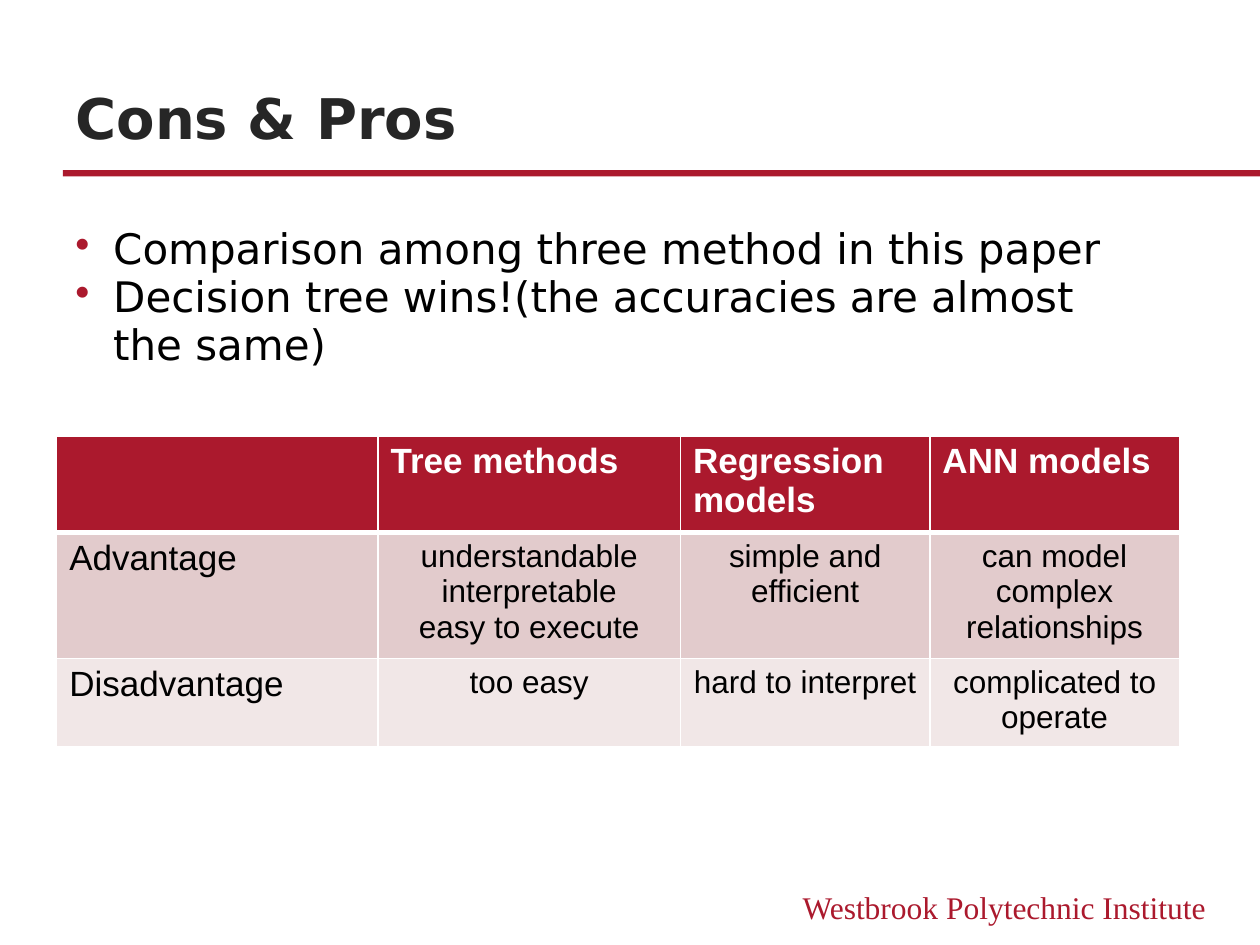
from lxml.etree import SubElement
from pptx import Presentation
from pptx.dml.color import RGBColor
from pptx.enum.shapes import MSO_SHAPE
from pptx.enum.text import MSO_ANCHOR, PP_ALIGN
from pptx.oxml.ns import qn
from pptx.util import Inches, Pt

HUES = {"red": "AB192D", "dark": "262626", "black": "000000",
        "white": "FFFFFF", "rose": "E2CBCC", "pale": "F1E7E7"}


def write(frame, text, size, font="Arial", hue="black", bold=False,
          align=PP_ALIGN.LEFT, space=None, bullet=False):
    """Fill a text frame, one paragraph per line of text."""
    frame.word_wrap = True
    frame.text = text
    for para in frame.paragraphs:
        para.alignment = align
        para.line_spacing = space
        para.font.size = Pt(size)
        for run in para.runs:
            run.font.name = font
            run.font.size = Pt(size)
            run.font.bold = bold
            run.font.color.rgb = RGBColor.from_string(HUES[hue])
        if bullet:
            props = para._p.get_or_add_pPr()
            props.set("marL", str(Inches(0.3)))
            props.set("indent", str(Inches(-0.3)))
            tint = SubElement(props, qn("a:buClr"))
            SubElement(tint, qn("a:srgbClr"), val=HUES["red"])
            SubElement(props, qn("a:buChar"), char="•")


def edge(cell, side, width):
    """Draw one white border of a table cell."""
    line = SubElement(cell._tc.get_or_add_tcPr(), qn("a:ln" + side), w=str(Pt(width)))
    fill = SubElement(line, qn("a:solidFill"))
    SubElement(fill, qn("a:srgbClr"), val=HUES["white"])


deck = Presentation()
deck.slide_width, deck.slide_height = Inches(10), Inches(7.5)
slide = deck.slides.add_slide(deck.slide_layouts[5])
shapes = slide.shapes

# Title and the rule below it
title = shapes.title
title.left, title.top = Inches(0.5), Inches(0.38)
title.width, title.height = Inches(9), Inches(0.87)
title.text_frame.vertical_anchor = MSO_ANCHOR.BOTTOM
write(title.text_frame, "Cons & Pros", 32, font="DejaVu Sans", hue="dark", bold=True)

rule = shapes.add_shape(MSO_SHAPE.RECTANGLE, Inches(0.5), Inches(1.35),
                        Inches(9.5), Inches(0.05))
rule.shadow.inherit = False
rule.fill.solid()
rule.fill.fore_color.rgb = RGBColor.from_string(HUES["red"])
rule.line.fill.background()

# Bullets
body = shapes.add_textbox(Inches(0.5), Inches(1.75), Inches(8.75), Inches(1.33))
write(body.text_frame,
      "Comparison among three method in this paper\n"
      "Decision tree wins!(the accuracies are almost the same)",
      24, font="DejaVu Sans", space=0.95, bullet=True)

# Table of methods
rows = [
    ["", "Tree methods", "Regression models", "ANN models"],
    ["Advantage", "understandable\ninterpretable\neasy to execute",
     "simple and efficient", "can model complex relationships"],
    ["Disadvantage", "too easy", "hard to interpret", "complicated to operate"],
]
wide = [2.55, 2.4, 1.98, 1.98]
table = shapes.add_table(len(rows), len(wide), Inches(0.45), Inches(3.46),
                         Inches(sum(wide)), Inches(0.62 * len(rows))).table
for col, width in zip(table.columns, wide):
    col.width = Inches(width)

for r, (row, hue) in enumerate(zip(rows, ["red", "rose", "pale"])):
    for c, text in enumerate(row):
        cell = table.cell(r, c)
        head = r == 0
        for side in "LRTB":
            thick = (head and side == "B") or (r == 1 and side == "T")
            edge(cell, side, 3 if thick else 1)
        cell.fill.solid()
        cell.fill.fore_color.rgb = RGBColor.from_string(HUES[hue])
        label = head or c == 0
        write(cell.text_frame, text, 20 if label else 18,
              hue="white" if head else "black", bold=head,
              align=PP_ALIGN.LEFT if label else PP_ALIGN.CENTER)

# Footer
foot = shapes.add_textbox(Inches(6), Inches(7), Inches(3.67), Inches(0.4))
write(foot.text_frame, "Westbrook Polytechnic Institute", 18,
      font="Times New Roman", hue="red", align=PP_ALIGN.RIGHT)

deck.save("out.pptx")
